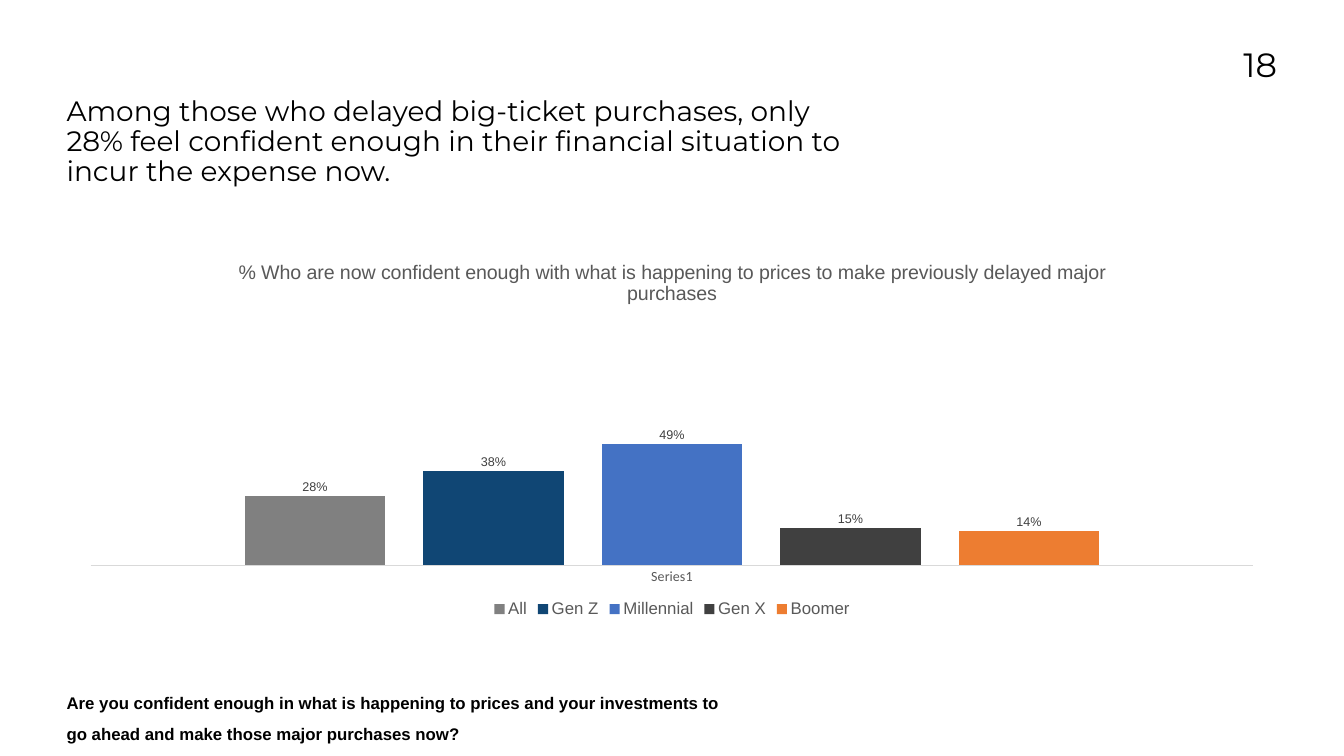
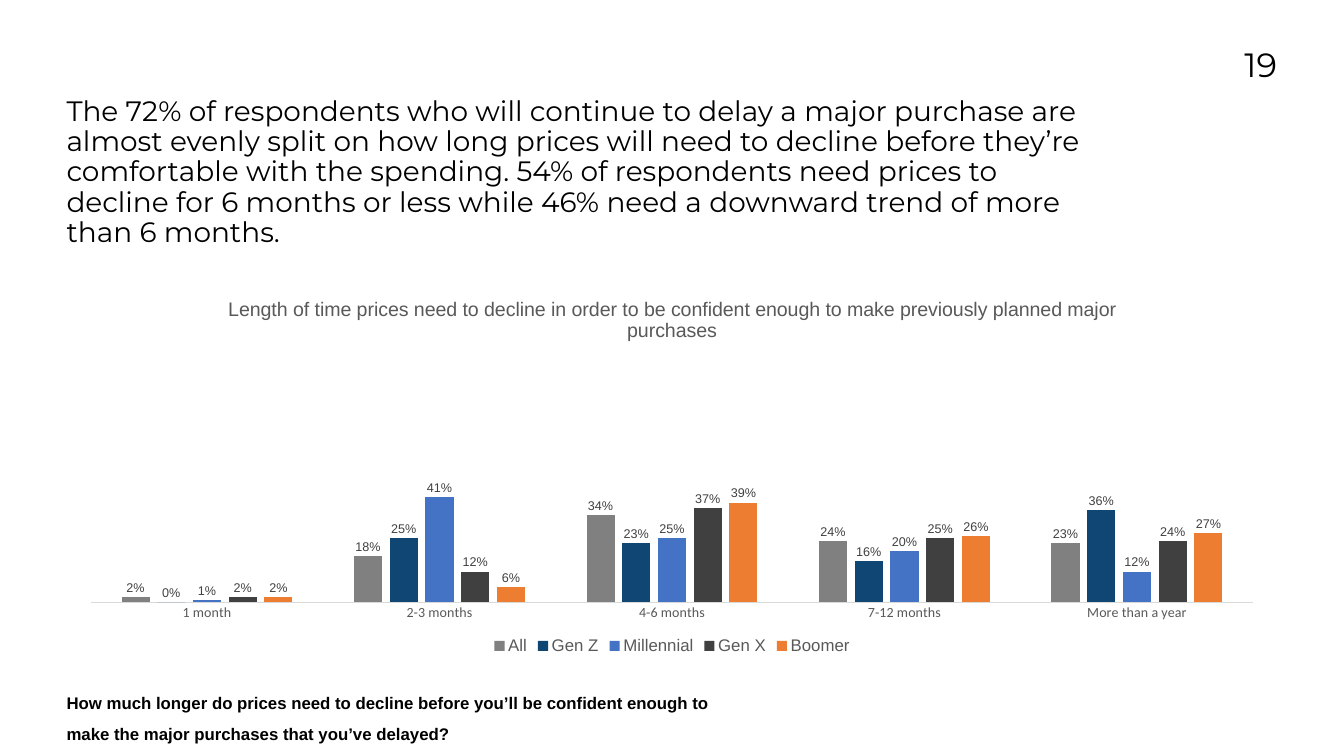
from dataclasses import dataclass

from lxml import etree
from pptx import Presentation
from pptx.chart.data import CategoryChartData
from pptx.dml.color import RGBColor
from pptx.enum.chart import XL_CHART_TYPE, XL_LABEL_POSITION, XL_LEGEND_POSITION, XL_TICK_MARK
from pptx.enum.text import PP_ALIGN
from pptx.oxml.ns import qn
from pptx.util import Inches, Pt

COLUMNS = XL_CHART_TYPE.COLUMN_CLUSTERED
OUTSIDE_END = XL_LABEL_POSITION.OUTSIDE_END
BOTTOM = XL_LEGEND_POSITION.BOTTOM
NO_TICK = XL_TICK_MARK.NONE
LEFT, RIGHT = PP_ALIGN.LEFT, PP_ALIGN.RIGHT

COLORS = {
    "background": "FFFFFF",
    "text": "000000",
    "chart_text": "595959",
    "label": "404040",
    "axis": "D9D9D9",
}
GENERATIONS = {
    "All": "808080",
    "Gen Z": "104674",
    "Millennial": "4472C4",
    "Gen X": "404040",
    "Boomer": "ED7D31",
}
HEADING_FONT, BODY_FONT, AXIS_FONT = "Montserrat", "Arial", "Calibri"
MARGIN = 1.32
CHART_WIDTH, CHART_HEIGHT = 24.03, 7.46
PLOT_BOTTOM = 0.85  # share of the chart height


@dataclass
class TextStyle:
    font: str
    size: float
    bold: bool = False
    align: PP_ALIGN = LEFT
    line_spacing: float = 1.0


NUMBER = TextStyle(HEADING_FONT, 48, align=RIGHT)
HEADLINE = TextStyle(HEADING_FONT, 40, line_spacing=0.9)
QUESTION = TextStyle(BODY_FONT, 24, bold=True, line_spacing=1.5)


@dataclass
class SurveySlide:
    number: int
    headline: str
    headline_width: float
    chart_title: str
    chart_top: float
    plot_top: float
    categories: list[str]
    values: list[list[float]]  # one row per generation
    question: str


SLIDES = [
    SurveySlide(
        18,
        "Among those who delayed big-ticket purchases, only 28% feel confident enough "
        "in their financial situation to incur the expense now.",
        16.01,
        "% Who are now confident enough with what is happening to prices to make "
        "previously delayed major purchases",
        4.88,
        0.19,
        ["Series1"],
        [[0.28], [0.38], [0.49], [0.15], [0.14]],
        "Are you confident enough in what is happening to prices and your investments "
        "to go ahead and make those major purchases now?",
    ),
    SurveySlide(
        19,
        "The 72% of respondents who will continue to delay a major purchase are almost "
        "evenly split on how long prices will need to decline before they’re comfortable "
        "with the spending. 54% of respondents need prices to decline for 6 months or "
        "less while 46% need a downward trend of more than 6 months.",
        20.23,
        "Length of time prices need to decline in order to be confident enough to make "
        "previously planned major purchases",
        5.61,
        0.17,
        ["1 month", "2-3 months", "4-6 months", "7-12 months", "More than a year"],
        [
            [0.02, 0.18, 0.34, 0.24, 0.23],
            [0, 0.25, 0.23, 0.16, 0.36],
            [0.01, 0.41, 0.25, 0.2, 0.12],
            [0.02, 0.12, 0.37, 0.25, 0.24],
            [0.02, 0.06, 0.39, 0.26, 0.27],
        ],
        "How much longer do prices need to decline before you’ll be confident enough to "
        "make the major purchases that you’ve delayed?",
    ),
]


def rgb(name: str) -> RGBColor:
    return RGBColor.from_string(COLORS[name])


def set_font(font, name: str, size: float, color: str, bold: bool = False) -> None:
    font.name = name
    font.size = Pt(size)
    font.bold = bold
    font.color.rgb = rgb(color)


def add_text(s, text: str, x: float, y: float, w: float, h: float, style: TextStyle) -> None:
    tf = s.shapes.add_textbox(Inches(x), Inches(y), Inches(w), Inches(h)).text_frame
    tf.word_wrap = True
    tf.margin_left = tf.margin_top = tf.margin_right = tf.margin_bottom = 0
    p = tf.paragraphs[0]
    p.alignment = style.align
    p.line_spacing = style.line_spacing
    r = p.add_run()
    r.text = text
    set_font(r.font, style.font, style.size, "text", style.bold)


def set_plot_area(chart, top: float) -> None:
    """Fix the inner plot area, given as shares of the chart's size."""
    plot_area = chart.plots[0]._element.getparent()
    for old in plot_area.findall(qn("c:layout")):
        plot_area.remove(old)
    layout = etree.Element(qn("c:layout"))
    manual = etree.SubElement(layout, qn("c:manualLayout"))
    settings = {
        "layoutTarget": "inner", "xMode": "edge", "yMode": "edge",
        "x": 0.02, "y": top, "w": 0.96, "h": round(PLOT_BOTTOM - top, 2),
    }
    for tag, value in settings.items():
        etree.SubElement(manual, qn(f"c:{tag}")).set("val", str(value))
    plot_area.insert(0, layout)


def style_axes(chart) -> None:
    axis = chart.category_axis
    axis.major_tick_mark = axis.minor_tick_mark = NO_TICK
    axis.format.line.color.rgb = rgb("axis")
    axis.format.line.width = Pt(0.75)
    set_font(axis.tick_labels.font, AXIS_FONT, 20, "chart_text")

    axis = chart.value_axis
    axis.minimum_scale, axis.maximum_scale = 0, 1
    axis.has_major_gridlines = False
    axis.tick_labels.number_format = "0%"
    axis.tick_labels.number_format_is_linked = False
    axis.visible = False


def add_generation_chart(s, content: SurveySlide) -> None:
    data = CategoryChartData(number_format="0%")
    data.categories = content.categories
    for name, values in zip(GENERATIONS, content.values):
        data.add_series(name, values)
    chart = s.shapes.add_chart(
        COLUMNS, Inches(MARGIN), Inches(content.chart_top),
        Inches(CHART_WIDTH), Inches(CHART_HEIGHT), data,
    ).chart
    set_font(chart.font, AXIS_FONT, 10, "text")

    chart.has_title = True
    chart.chart_title.include_in_layout = False
    r = chart.chart_title.text_frame.paragraphs[0].add_run()
    r.text = content.chart_title
    set_font(r.font, BODY_FONT, 28, "chart_text")

    chart.has_legend = True
    chart.legend.position = BOTTOM
    chart.legend.include_in_layout = False
    set_font(chart.legend.font, BODY_FONT, 24, "chart_text")

    style_axes(chart)
    set_plot_area(chart, content.plot_top)

    plot = chart.plots[0]
    plot.gap_width, plot.overlap = 219, -27
    plot.vary_by_categories = False
    for series, color in zip(plot.series, GENERATIONS.values()):
        series.format.fill.solid()
        series.format.fill.fore_color.rgb = RGBColor.from_string(color)
        labels = series.data_labels
        labels.show_value = True
        labels.position = OUTSIDE_END
        labels.number_format = "0%"
        labels.number_format_is_linked = False
        set_font(labels.font, BODY_FONT, 18, "label")


def add_survey_slide(prs, content: SurveySlide) -> None:
    s = prs.slides.add_slide(prs.slide_layouts[6])
    s.background.fill.solid()
    s.background.fill.fore_color.rgb = rgb("background")
    add_text(s, str(content.number), 23.09, 0.88, 2.25, 1.64, NUMBER)
    add_generation_chart(s, content)
    add_text(s, content.headline, MARGIN, 1.93, content.headline_width, 2.08, HEADLINE)
    add_text(s, content.question, MARGIN, 13.55, 13.27, 0.65, QUESTION)


def main() -> None:
    prs = Presentation()
    prs.slide_width, prs.slide_height = Inches(26.67), Inches(15)
    for content in SLIDES:
        add_survey_slide(prs, content)
    prs.save("out.pptx")


if __name__ == "__main__":
    main()
